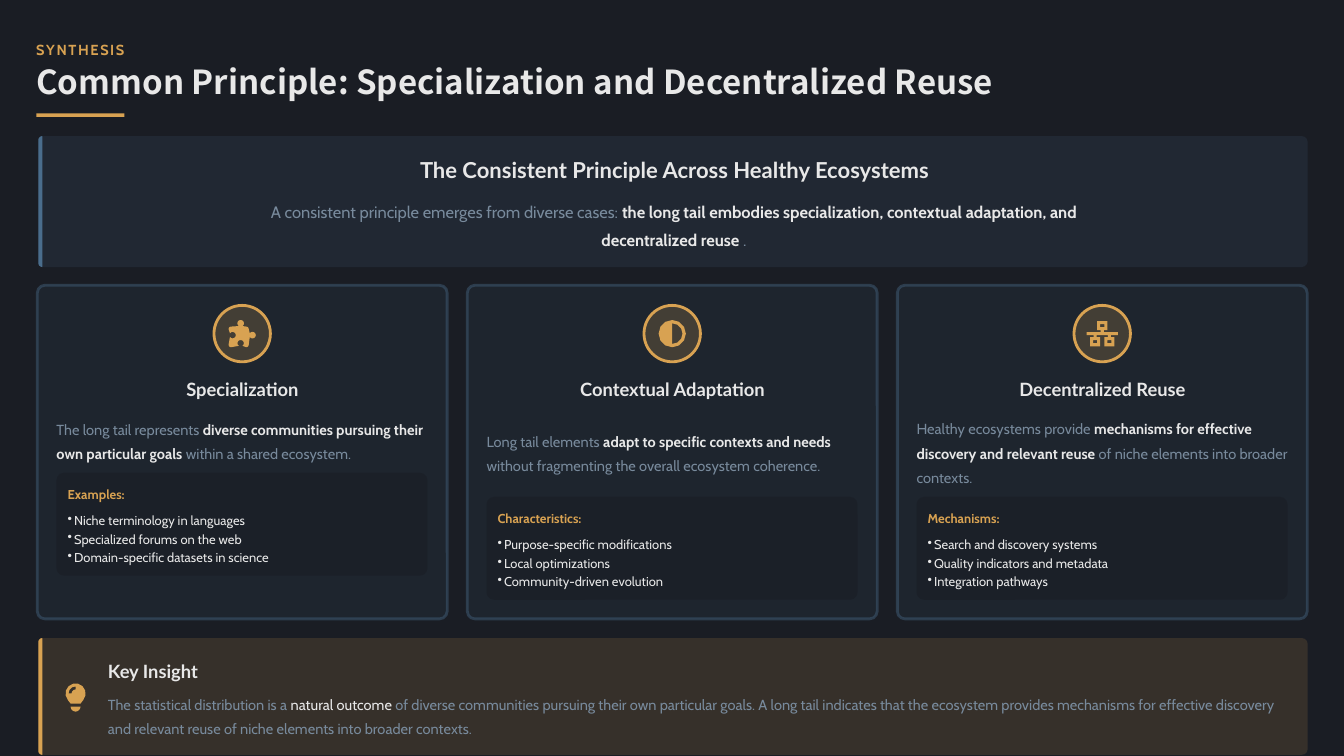
from dataclasses import dataclass
from math import cos, radians, sin

from lxml import etree
from pptx import Presentation
from pptx.dml.color import RGBColor
from pptx.enum.shapes import MSO_SHAPE
from pptx.enum.text import MSO_ANCHOR, PP_ALIGN
from pptx.oxml.ns import qn
from pptx.util import Inches, Pt

UNIT = Inches(0.01)
COLUMNS, ROWS = 1333, 750
ROUNDED, OVAL = MSO_SHAPE.ROUNDED_RECTANGLE, MSO_SHAPE.OVAL
RECTANGLE = MSO_SHAPE.RECTANGLE
MIDDLE = MSO_ANCHOR.MIDDLE
LEFT, CENTER = PP_ALIGN.LEFT, PP_ALIGN.CENTER


@dataclass(frozen=True)
class Theme:
    night: str = "1A1D24"
    gold: str = "D8A252"
    steel: str = "4A6D8C"
    white: str = "E8E8E8"
    gray: str = "788A9C"
    body: str = "Cabin"
    heading: str = "Lato"
    display: str = "Noto Sans CJK SC"
    title_size: float = 23.6
    banner_size: float = 15.7
    heading_size: float = 13.1
    lead_size: float = 11.8
    body_size: float = 10.4
    small_size: float = 9.2


@dataclass(frozen=True)
class Box:
    left: float
    top: float
    width: float
    height: float

    def inner(self, left, top, width, height):
        return Box(self.left + left, self.top + top, width, height)

    def emu(self):
        return [round(v * UNIT) for v in (self.left, self.top, self.width, self.height)]


THEME = Theme()


def paint(shape, color, alpha=100, line=None, line_alpha=100):
    shape.shadow.inherit = False
    shape.fill.solid()
    shape.fill.fore_color.rgb = RGBColor.from_string(color)
    if line:
        shape.line.width = Pt(2)
        shape.line.color.rgb = RGBColor.from_string(line)
    else:
        shape.line.fill.background()
    for part, share in ((shape.fill, alpha), (shape.line.fill, line_alpha)):
        if share < 100:
            rgb = part._xPr.find(qn("a:solidFill"))[0]
            etree.SubElement(rgb, qn("a:alpha"), val=str(share * 1000))


def add_preset(slide, kind, box, color, radius=0, **style):
    shape = slide.shapes.add_shape(kind, *box.emu())
    if radius:
        shape.adjustments[0] = radius / min(box.width, box.height)
    paint(shape, color, **style)


def arc(x, y, radius, start, end):
    steps = max(2, round(abs(end - start) / 30))
    angles = [radians(start + (end - start) * i / steps) for i in range(steps + 1)]
    return [(x + radius * cos(a), y + radius * sin(a)) for a in angles]


def rectangle(left, top, width, height):
    right, bottom = left + width, top + height
    return [(left, top), (right, top), (right, bottom), (left, bottom)]


def add_outline(slide, box, contours, color):
    placed = [[(round((box.left + x) * UNIT), round((box.top + y) * UNIT)) for x, y in contour]
              for contour in contours]
    builder = slide.shapes.build_freeform(*placed[0][0])
    for i, contour in enumerate(placed):
        if i:
            builder.move_to(*contour[0])
        builder.add_line_segments(contour[1:], close=True)
    paint(builder.convert_to_shape(), color)


def add_text(slide, box, paragraphs, size, font=THEME.body, align=LEFT,
             spacing=1.2, bullets=False, tracking=0):
    frame = slide.shapes.add_textbox(*box.emu()).text_frame
    frame.word_wrap = True
    frame.vertical_anchor = MIDDLE
    frame.margin_left = frame.margin_right = frame.margin_top = frame.margin_bottom = 0
    for i, pieces in enumerate(paragraphs):
        paragraph = frame.add_paragraph() if i else frame.paragraphs[0]
        if bullets:
            properties = paragraph._p.get_or_add_pPr()
            indent = round(6.5 * UNIT)
            properties.set("marL", str(indent))
            properties.set("indent", str(-indent))
            etree.SubElement(properties, qn("a:buChar"), char="•")
        paragraph.alignment = align
        paragraph.line_spacing = spacing
        for text, color, bold in pieces:
            run = paragraph.add_run()
            run.text = text
            run.font.size = Pt(size)
            run.font.name = font
            run.font.bold = bold
            run.font.color.rgb = RGBColor.from_string(color)
            if tracking:
                run._r.get_or_add_rPr().set("spc", str(tracking))


def emphasized(before, strong, after, bold=True):
    return [[(before, THEME.gray, False), (strong, THEME.white, bold), (after, THEME.gray, False)]]


def puzzle_icon():
    return [arc(2.5, 9, 2.5, 180, 270) + arc(12, 3.3, 3.3, 125, 415)
            + arc(17.5, 9, 2.5, 270, 360) + arc(23.7, 15, 3.3, 215, 505)
            + arc(17.5, 24.5, 2.5, 0, 90) + arc(12, 23, 3.2, 55, -235)
            + arc(2.5, 24.5, 2.5, 90, 180) + arc(4, 15, 3.2, 145, -145)]


def contrast_icon():
    return [arc(13.5, 13.5, 13.5, 0, 360), arc(13.5, 13.5, 10.2, 90, -90)]


def network_icon():
    contours = [rectangle(-2, 12, 31, 3)]
    for left, top, stem_top in ((8.5, 1, 10), (1.5, 17, 15), (15.5, 17, 15)):
        contours += [rectangle(left, top, 10, 9), rectangle(left + 3, top + 3, 4, 3),
                     rectangle(left + 3.5, stem_top, 3, 2)]
    return contours


def bulb_icon():
    return [arc(10, 10, 10, 140, 400) + [(15, 20), (5, 20)],
            arc(10, 23, 5, 0, 180),
            arc(10, 10, 7, 180, 270) + arc(10, 10, 4, 270, 180)]


def build_header(slide, box):
    add_text(slide, box.inner(0, 0, box.width, 22), [[("SYNTHESIS", THEME.gold, True)]],
             THEME.body_size, spacing=1.3, tracking=110)
    title = "Common Principle: Specialization and Decentralized Reuse"
    add_text(slide, box.inner(0, 29, box.width, 36), [[(title, THEME.white, True)]],
             THEME.title_size, THEME.display, spacing=0.9)
    add_preset(slide, RECTANGLE, box.inner(0, 76.5, 87.5, 3.5), THEME.gold)


def build_panel(slide, box, color):
    add_preset(slide, ROUNDED, box, color, 6, alpha=15)
    strip = arc(4, 4, 4, 180, 270) + arc(4, box.height - 4, 4, 90, 180)
    add_outline(slide, box, [strip], color)


def build_principle(slide, box):
    build_panel(slide, box, THEME.steel)
    heading = "The Consistent Principle Across Healthy Ecosystems"
    add_text(slide, box.inner(15, 18, 1232, 29), [[(heading, THEME.white, True)]],
             THEME.banner_size, THEME.heading, CENTER, 1.1)
    lead = emphasized("A consistent principle emerges from diverse cases: ",
                      "the long tail embodies specialization, contextual adaptation, "
                      "and decentralized reuse ", ".")
    add_text(slide, box.inner(219, 58, 823, 54), lead, THEME.lead_size, align=CENTER, spacing=1.4)


def build_card(slide, box, icon, heading, body, body_height, label, items):
    add_preset(slide, ROUNDED, box, THEME.steel, 7.5, alpha=10, line=THEME.steel, line_alpha=40)
    badge = box.inner(box.width / 2 - 28, 20, 56, 56)
    add_preset(slide, OVAL, badge, THEME.gold, alpha=20, line=THEME.gold)
    add_outline(slide, badge.inner(14.5, 14.5, 27, 27), icon, THEME.gold)
    add_text(slide, box.inner(15, 88, 377, 25), [[(heading, THEME.white, True)]],
             THEME.heading_size, THEME.heading, CENTER)
    add_text(slide, box.inner(19, 128, 375, body_height), emphasized(*body),
             THEME.body_size, spacing=1.4)
    details = box.inner(19, 139 + body_height, 368, 102)
    add_preset(slide, ROUNDED, details, THEME.night, 7.5, alpha=60)
    add_text(slide, details.inner(11, 11, 353, 18), [[(label, THEME.gold, True)]],
             THEME.small_size)
    add_text(slide, details.inner(11, 36.5, 353, 55),
             [[(item, THEME.white, False)] for item in items], THEME.small_size, bullets=True)


def build_insight(slide, box):
    build_panel(slide, box, THEME.gold)
    add_outline(slide, box.inner(27, 45, 20, 28), bulb_icon(), THEME.gold)
    add_text(slide, box.inner(69, 18, 1181, 25), [[("Key Insight", THEME.white, True)]],
             THEME.heading_size, THEME.heading)
    message = emphasized(
        "The statistical distribution is a ", "natural outcome",
        " of diverse communities pursuing their own particular goals. A long tail indicates that "
        "the ecosystem provides mechanisms for effective discovery and relevant reuse of niche "
        "elements into broader contexts.", bold=False)
    add_text(slide, box.inner(69, 51, 1179, 47), message, THEME.body_size, spacing=1.4)


CARDS = [
    (puzzle_icon(), "Specialization",
     ("The long tail represents ", "diverse communities pursuing their own particular goals",
      " within a shared ecosystem."), 47, "Examples:",
     ["Niche terminology in languages", "Specialized forums on the web",
      "Domain-specific datasets in science"]),
    (contrast_icon(), "Contextual Adaptation",
     ("Long tail elements ", "adapt to specific contexts and needs",
      " without fragmenting the overall ecosystem coherence."), 71, "Characteristics:",
     ["Purpose-specific modifications", "Local optimizations", "Community-driven evolution"]),
    (network_icon(), "Decentralized Reuse",
     ("Healthy ecosystems provide ", "mechanisms for effective discovery and relevant reuse",
      " of niche elements into broader contexts."), 71, "Mechanisms:",
     ["Search and discovery systems", "Quality indicators and metadata", "Integration pathways"]),
]


def main():
    deck = Presentation()
    deck.slide_width, deck.slide_height = COLUMNS * UNIT, ROWS * UNIT
    slide = deck.slides.add_slide(deck.slide_layouts[6])
    slide.background.fill.solid()
    slide.background.fill.fore_color.rgb = RGBColor.from_string(THEME.night)
    build_header(slide, Box(36, 36, 1277, 80))
    build_principle(slide, Box(38, 135, 1259, 130))
    card_width, card_gap = 406.5, 20
    for i, card in enumerate(CARDS):
        left = 37 + i * (card_width + card_gap)
        build_card(slide, Box(left, 283, card_width, 331), *card)
    build_insight(slide, Box(38, 633, 1259, 116))
    deck.save("out.pptx")


if __name__ == "__main__":
    main()
